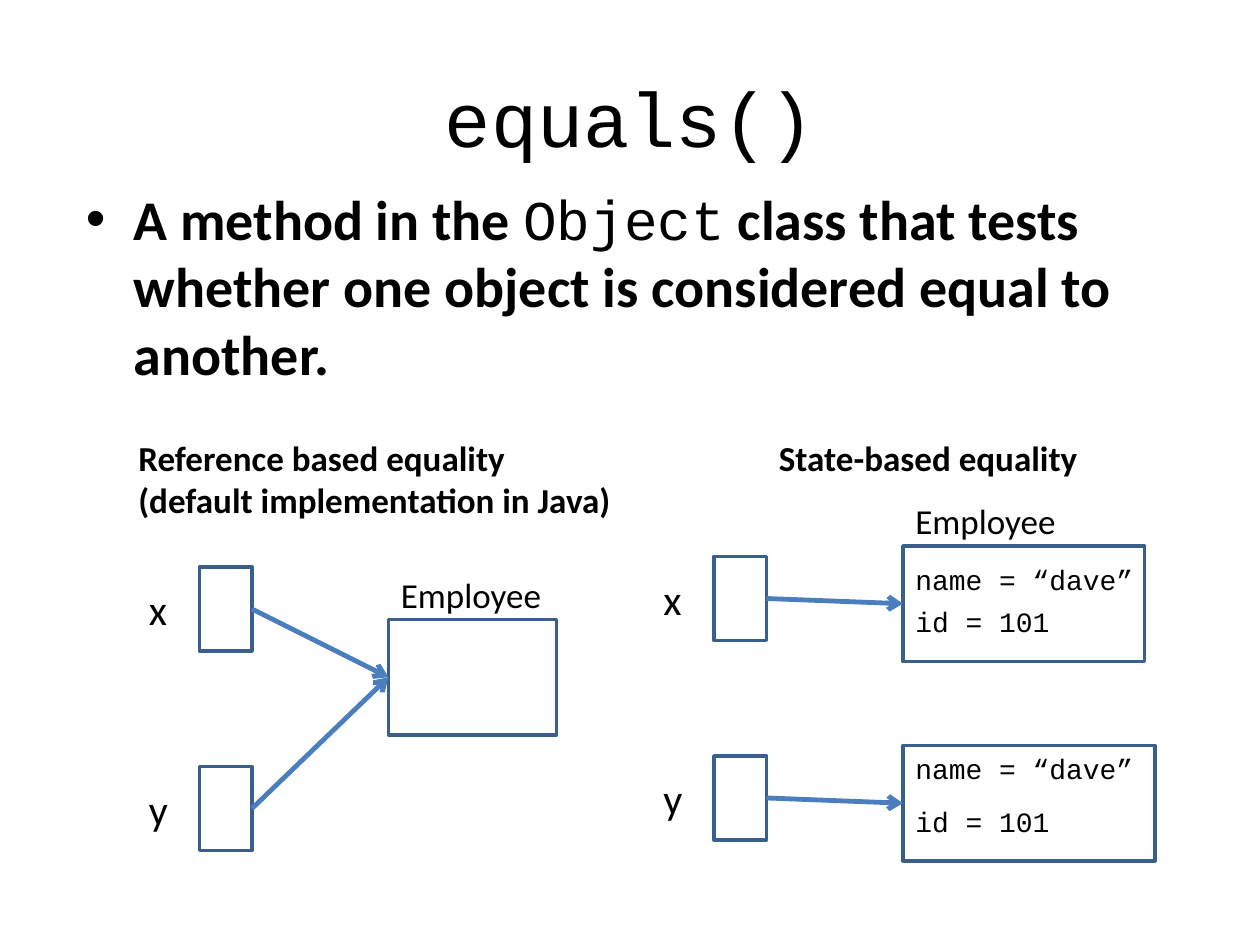
"""Build a slide on reference-based and state-based equality."""
from lxml.etree import SubElement
from pptx import Presentation
from pptx.dml.color import RGBColor
from pptx.enum.shapes import MSO_CONNECTOR, MSO_SHAPE
from pptx.enum.text import MSO_ANCHOR, PP_ALIGN
from pptx.oxml.ns import qn
from pptx.util import Inches, Pt

SANS, MONO = "Calibri", "Courier New"
INK, PAPER, EDGE, ARROW = "000000", "FFFFFF", "3A5F8C", "4B7EBC"
UNIT = 1 / 12
FORMAT = {
    "title": {"name": MONO, "size": Pt(44)},
    "body": {"name": SANS, "size": Pt(32), "bold": True},
    "term": {"name": MONO, "size": Pt(32), "bold": False},
    "head": {"name": SANS, "size": Pt(20), "bold": True},
    "label": {"name": SANS, "size": Pt(20)},
    "name": {"name": SANS, "size": Pt(24)},
    "code": {"name": MONO, "size": Pt(16)},
}
BODY = [
    ("A method in the ", "body"),
    ("Object", "term"),
    (" class that tests whether one object is considered equal to another.", "body"),
]
HEADS = [
    ("Reference based equality (default implementation in Java)", 12, 41, 48),
    ("State-based equality", 73, 41, 41),
]
LABELS = [("Employee", 37, 54), ("Employee", 86, 47)]
OBJECTS = [(37, 59, 16), (86, 52, 23), (86, 71, 24)]
FIELDS = [
    ("name = “dave”", 53, 23.5),
    ("id = 101", 57, 15.4),
    ("name = “dave”", 71, 23.5),
    ("id = 101", 76, 15.4),
]
REFS = [
    ("x", 19, 54, 0),
    ("y", 19, 73, 0),
    ("x", 68, 53, 1),
    ("y", 68, 72, 2),
]
REF_W, REF_H, OBJ_H = 5, 8, 11


def color(code):
    """Turn a hex string into a colour."""
    return RGBColor.from_string(code)


def grid(*cells):
    """Turn grid cells into lengths."""
    return [Inches(cell * UNIT) for cell in cells]


def write(slide, runs, place, wrap=True):
    """Add a text box with formatted runs and return its frame."""
    frame = slide.shapes.add_textbox(*place).text_frame
    frame.word_wrap = wrap
    for text, style in runs:
        run = frame.paragraphs[0].add_run()
        run.text = text
        run.font.color.rgb = color(INK)
        for key, value in FORMAT[style].items():
            setattr(run.font, key, value)
    return frame


def bullet(para):
    """Give a paragraph a hanging bullet and proportional space before."""
    props = para._p.get_or_add_pPr()
    props.set("marL", str(Inches(0.38)))
    props.set("indent", str(-Inches(0.38)))
    space = SubElement(props, qn("a:spcBef"))
    SubElement(space, qn("a:spcPct")).set("val", "20000")
    SubElement(props, qn("a:buFont")).set("typeface", "Arial")
    SubElement(props, qn("a:buChar")).set("char", "•")


def box(slide, *cells):
    """Add an outlined rectangle."""
    shape = slide.shapes.add_shape(MSO_SHAPE.RECTANGLE, *grid(*cells))
    shape.shadow.inherit = False
    shape.fill.solid()
    shape.fill.fore_color.rgb = color(PAPER)
    shape.line.color.rgb = color(EDGE)
    shape.line.width = Pt(2)


def arrow(slide, *ends):
    """Add a line with an open arrowhead at its end."""
    link = slide.shapes.add_connector(MSO_CONNECTOR.STRAIGHT, *grid(*ends))
    link.line.color.rgb = color(ARROW)
    link.line.width = Pt(2.75)
    SubElement(link.line._get_or_add_ln(), qn("a:tailEnd")).set("type", "arrow")
    SubElement(link._element.spPr, qn("a:effectLst"))


def main():
    """Lay out the slide and save it."""
    deck = Presentation()
    deck.slide_width, deck.slide_height = Inches(10), Inches(7.5)
    slide = deck.slides.add_slide(deck.slide_layouts[6])

    title = write(slide, [("equals()", "title")], grid(6, 3.6, 108, 15))
    title.vertical_anchor = MSO_ANCHOR.MIDDLE
    title.paragraphs[0].alignment = PP_ALIGN.CENTER
    bullet(write(slide, BODY, grid(7, 17, 108, 59.4)).paragraphs[0])

    for left, top, width in OBJECTS:
        box(slide, left, top, width, OBJ_H)
    for name, left, top, goal in REFS:
        box(slide, left, top, REF_W, REF_H)
        write(slide, [(name, "name")], grid(left - 6, top + 1, 6, 6))
        end, high, _ = OBJECTS[goal]
        arrow(slide, left + REF_W, top + REF_H / 2, end, high + OBJ_H / 2)
    for text, left, top, width in HEADS:
        write(slide, [(text, "head")], grid(left, top, width, 5.25))
    for text, left, top in LABELS:
        write(slide, [(text, "label")], grid(left, top, 18, 5.25))
    for text, top, width in FIELDS:
        write(slide, [(text, "code")], grid(86, top, width, 4.44), wrap=False)
    deck.save("out.pptx")


if __name__ == "__main__":
    main()
